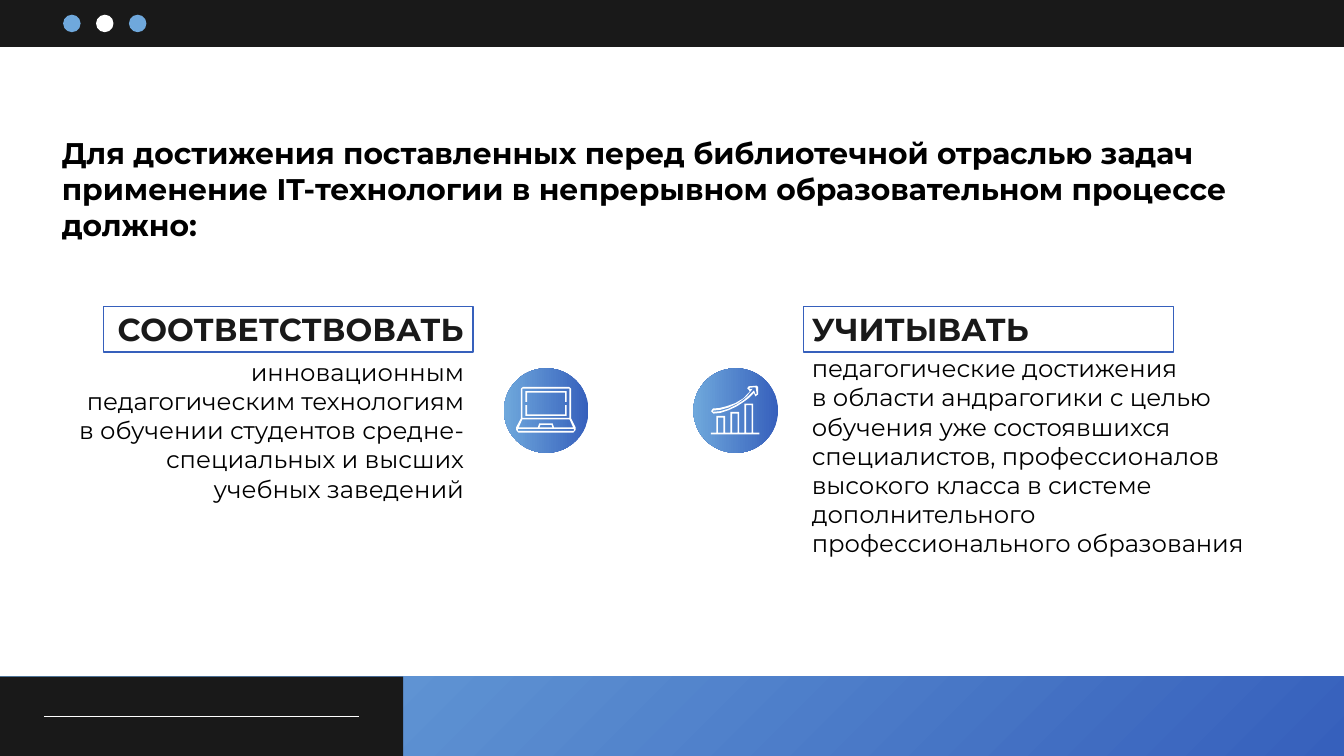
from lxml import etree
from pptx import Presentation
from pptx.dml.color import RGBColor
from pptx.enum.shapes import MSO_CONNECTOR, MSO_SHAPE
from pptx.enum.text import MSO_ANCHOR, MSO_AUTO_SIZE, PP_ALIGN
from pptx.oxml.ns import qn
from pptx.util import Inches, Pt

RECT, OVAL = MSO_SHAPE.RECTANGLE, MSO_SHAPE.OVAL
STRAIGHT = MSO_CONNECTOR.STRAIGHT
MIDDLE, NO_FIT = MSO_ANCHOR.MIDDLE, MSO_AUTO_SIZE.NONE
LEFT, RIGHT = PP_ALIGN.LEFT, PP_ALIGN.RIGHT

CELL = Inches(0.1)
COLUMNS, ROWS = 100, 56.25
FINE = CELL / 100
FONT = "Montserrat"
DARK, BLUE, SKY, WHITE, BLACK = "191919", "3660BC", "6FA8DC", "FFFFFF", "000000"

ARROW_EDGE = [
    (5630, 2870), (5570, 2875), (5560, 2890), (5580, 2912), (5530, 2965),
    (5470, 3000), (5410, 3022), (5350, 3037), (5305, 3040), (5290, 3060),
    (5308, 3078), (5360, 3073), (5420, 3053), (5480, 3025), (5530, 2993),
    (5575, 2960), (5610, 2925), (5620, 2950), (5640, 2935), (5640, 2880)]
ARROW_HOLLOW = [
    (5622, 2882), (5580, 2885), (5573, 2895), (5600, 2893), (5555, 2950),
    (5490, 3000), (5420, 3033), (5360, 3050), (5308, 3055), (5305, 3065),
    (5360, 3060), (5420, 3042), (5480, 3012), (5530, 2980), (5570, 2945),
    (5610, 2905), (5622, 2935), (5630, 2930)]
LAPTOP_EDGE = [
    (3890, 2880), (4235, 2880), (4250, 2893), (4250, 3115), (4282, 3180),
    (4282, 3200), (4265, 3220), (3858, 3220), (3840, 3200), (3840, 3180),
    (3875, 3115), (3875, 2893)]
LAPTOP_DECK = [
    (3886, 3122), (4238, 3122), (4264, 3180), (4122, 3180), (4112, 3150),
    (4012, 3150), (4002, 3180), (3860, 3180)]
LAPTOP_PAD = [(4020, 3162), (4104, 3162), (4110, 3180), (4014, 3180)]


def color(value):
    """Return the colour for a hex string."""
    return RGBColor.from_string(value)


def cells(*lengths):
    """Turn grid cells into slide lengths."""
    return [round(length * CELL) for length in lengths]


def add_block(page, kind, place, fill=None, line=None):
    """Add a preset shape with an optional fill and outline."""
    shape = page.shapes.add_shape(kind, *cells(*place))
    shape.shadow.inherit = False
    if fill:
        shape.fill.solid()
        shape.fill.fore_color.rgb = color(fill)
    else:
        shape.fill.background()
    if line:
        shape.line.color.rgb = color(line)
        shape.line.width = Pt(0.75)
    else:
        shape.line.fill.background()
    return shape


def add_gradient(page, kind, place, angle):
    """Add a preset shape shaded from blue to sky."""
    fill = add_block(page, kind, place).fill
    fill.gradient()
    fill.gradient_angle = angle
    for stop, shade in zip(fill.gradient_stops, (BLUE, SKY)):
        stop.color.rgb = color(shade)


def add_rule(page, left, right, row):
    """Add a thin white horizontal line."""
    rule = page.shapes.add_connector(STRAIGHT, *cells(left, row, right, row))
    rule.line.color.rgb = color(WHITE)
    rule.line.width = Pt(0.75)
    etree.SubElement(rule._element.spPr, qn("a:effectLst"))


def frame(left, top, right, bottom):
    """Return the corners of a rectangle."""
    return [(left, top), (right, top), (right, bottom), (left, bottom)]


def add_icon(page, contours):
    """Add a white outline whose inner contours are holes."""
    first, *others = contours
    builder = page.shapes.build_freeform(*first[0], scale=FINE)
    builder.add_line_segments(first[1:])
    for contour in others:
        builder.move_to(*contour[0])
        builder.add_line_segments(contour[1:])
    icon = builder.convert_to_shape()
    icon.shadow.inherit = False
    icon.fill.solid()
    icon.fill.fore_color.rgb = color(WHITE)
    icon.line.fill.background()


def add_chart_icon(page):
    """Draw three rising bars under an arrow."""
    contours = [frame(5290, 3220, 5650, 3232)]
    for number, top in enumerate((3095, 3065, 3003)):
        left = 5330 + 105 * number
        contours.append(frame(left, top, left + 65, 3220))
        contours.append(frame(left + 12, top + 12, left + 53, 3220))
    add_icon(page, contours)
    add_icon(page, [ARROW_EDGE, ARROW_HOLLOW])


def add_laptop_icon(page):
    """Draw an open laptop with a framed screen."""
    add_icon(page, [LAPTOP_EDGE, frame(3887, 2893, 4237, 3110), LAPTOP_DECK,
                    LAPTOP_PAD, frame(3853, 3192, 4270, 3207)])
    for outer, inner in ((2910, 2990), (3095, 3015)):
        edge = outer + (12 if inner > outer else -12)
        add_icon(page, [[(3910, inner), (3910, outer), (4217, outer),
                         (4217, inner), (4205, inner), (4205, edge),
                         (3922, edge), (3922, inner)]])


def fill_placeholder(holder, place, text, size, shade, bold, align=LEFT):
    """Move a placeholder and give it one plain paragraph."""
    holder.left, holder.top, holder.width, holder.height = cells(*place)
    box = holder.text_frame
    box.text = text
    box.word_wrap = True
    box.auto_size = NO_FIT
    box.vertical_anchor = MIDDLE
    box.margin_left = box.margin_right = box.margin_top = box.margin_bottom = CELL
    para = box.paragraphs[0]
    properties = para._p.get_or_add_pPr()
    properties.set("marL", "0")
    properties.set("indent", "0")
    etree.SubElement(properties, qn("a:buNone"))
    para.alignment = align
    para.space_before = Pt(0)
    para.font.name = FONT
    para.font.size = Pt(size)
    para.font.bold = bold
    para.font.color.rgb = color(shade)


def add_bands(page):
    """Draw the top bar with its dots and the bottom bar."""
    add_block(page, RECT, (0, -0.1, COLUMNS, 3.6), DARK)
    for number, shade in enumerate((SKY, WHITE, SKY)):
        add_block(page, OVAL, (4.7 + 2.45 * number, 1.1, 1.3, 1.3), shade)
    bottom = ROWS - 5.9
    add_gradient(page, RECT, (0, bottom, COLUMNS, 5.9), 135)
    add_block(page, RECT, (0, bottom, 30, 5.9), DARK)
    add_rule(page, 26.7, 3.3, 53.3)


def main():
    """Build the slide and save it."""
    deck = Presentation()
    deck.slide_width, deck.slide_height = cells(COLUMNS, ROWS)
    page = deck.slides.add_slide(deck.slide_layouts.get_by_name("Comparison"))
    title, left_head, left_body, right_head, right_body = page.placeholders
    add_bands(page)

    fill_placeholder(
        title, (3.6, 10.9, 98, 6.3),
        "Для достижения поставленных перед библиотечной отраслью задач "
        "применение IT-технологии в непрерывном образовательном процессе "
        "должно:", 16, BLACK, True)
    fill_placeholder(left_head, (7.4, 21.6, 28.1, 5.8), "СООТВЕТСТВОВАТЬ",
                     17, DARK, True, RIGHT)
    fill_placeholder(
        left_body, (4.8, 29.1, 30.7, 5.8),
        "инновационным педагогическим технологиям в обучении студентов "
        "средне-специальных и высших учебных заведений",
        13, BLACK, False, RIGHT)
    fill_placeholder(right_head, (59.4, 21.6, 22, 5.8), "УЧИТЫВАТЬ",
                     17, DARK, True)
    fill_placeholder(
        right_body, (59.4, 31, 37.4, 5.8),
        "педагогические достижения\vв области андрагогики с целью обучения "
        "уже состоявшихся специалистов, профессионалов высокого класса в "
        "системе дополнительного профессионального образования",
        13, BLACK, False)

    for left in (7.7, 59.8):
        add_block(page, RECT, (left, 22.8, 27.5, 3.4), line=BLUE)
    for left in (37.5, 51.6):
        add_gradient(page, OVAL, (left, 27.4, 6.3, 6.3), 180)
    add_laptop_icon(page)
    add_chart_icon(page)
    deck.save("out.pptx")


if __name__ == "__main__":
    main()
